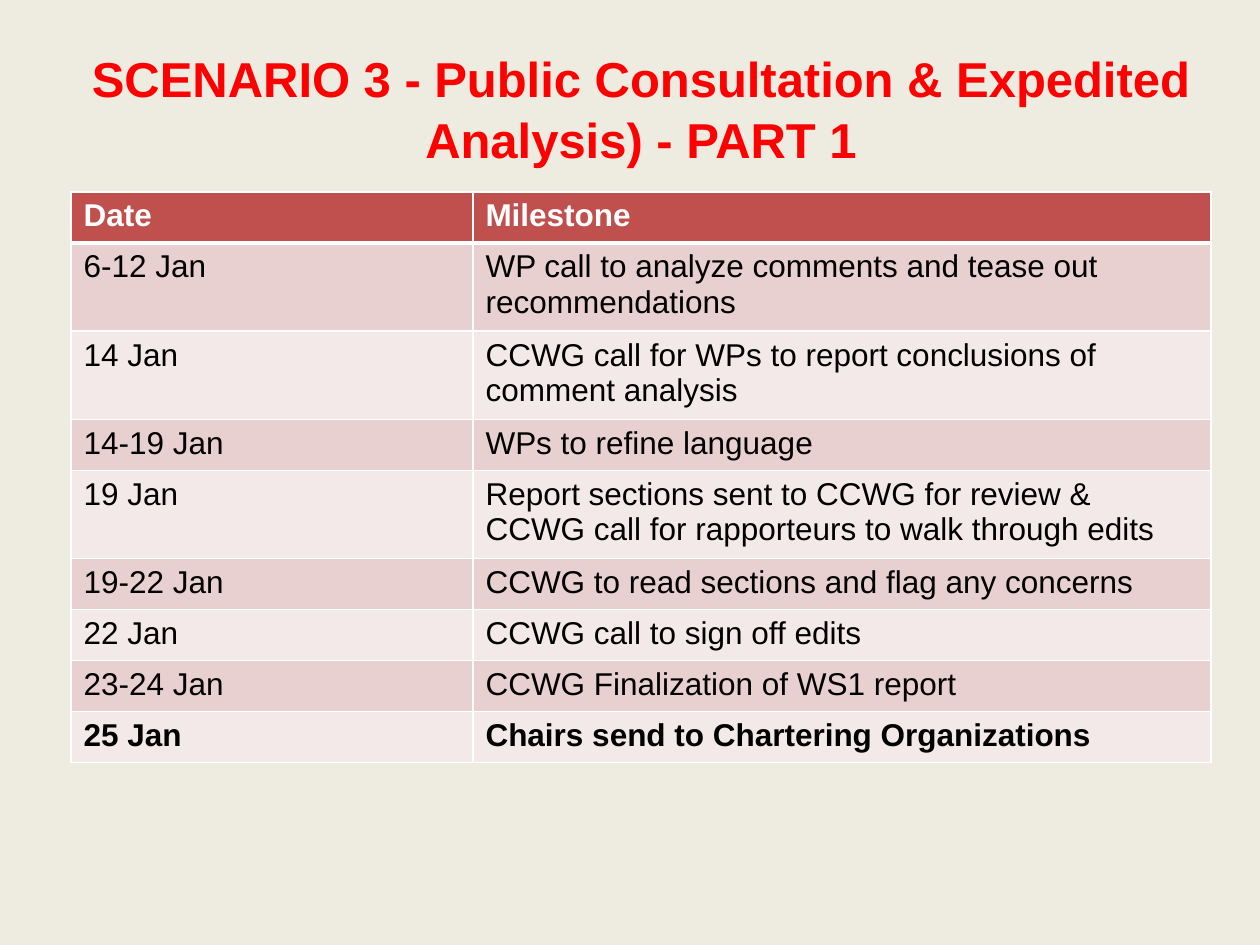
"""Build the Scenario 3 milestone slide: a red title above a two-column schedule."""
from lxml.etree import SubElement
from pptx import Presentation
from pptx.dml.color import RGBColor
from pptx.enum.text import PP_ALIGN
from pptx.oxml.ns import qn
from pptx.util import Pt

PX = 914400 // 126
BACKGROUND = RGBColor(0xEE, 0xEC, 0xE1)
RED = RGBColor(0xFF, 0x00, 0x00)
HEADER = RGBColor(0xC0, 0x50, 0x4D)
BAND_DARK = RGBColor(0xE8, 0xD0, 0xD0)
BAND_LIGHT = RGBColor(0xF4, 0xE9, 0xE9)
WHITE = RGBColor(0xFF, 0xFF, 0xFF)
BLACK = RGBColor(0x00, 0x00, 0x00)

LEFT, WIDTH = 71, 1140
COLUMN_WIDTHS = (402, 738)
ROW_HEIGHT = 51
MILESTONES = [
    ("Date", "Milestone"),
    ("6-12 Jan", "WP call to analyze comments and tease out recommendations"),
    ("14 Jan", "CCWG call for WPs to report conclusions of comment analysis"),
    ("14-19 Jan", "WPs to refine language"),
    ("19 Jan", "Report sections sent to CCWG for review & "
               "CCWG call for rapporteurs to walk through edits"),
    ("19-22 Jan", "CCWG to read sections and flag any concerns"),
    ("22 Jan", "CCWG call to sign off edits"),
    ("23-24 Jan", "CCWG Finalization of WS1 report"),
    ("25 Jan", "Chairs send to Chartering Organizations"),
]


def write(frame, text, size=18, color=BLACK, bold=False, align=PP_ALIGN.LEFT):
    frame.word_wrap = True
    para = frame.paragraphs[0]
    para.alignment = align
    span = para.add_run()
    span.text = text
    span.font.name = "Arial"
    span.font.size = Pt(size)
    span.font.bold = bold
    span.font.color.rgb = color
    return para


def add_border(cell, side, points):
    line = SubElement(cell._tc.get_or_add_tcPr(), qn(f"a:ln{side}"), w=str(Pt(points)))
    fill = SubElement(line, qn("a:solidFill"))
    SubElement(fill, qn("a:srgbClr"), val=str(WHITE))


deck = Presentation()
deck.slide_width, deck.slide_height = 1260 * PX, 945 * PX
page = deck.slides.add_slide(deck.slide_layouts[6])
page.background.fill.solid()
page.background.fill.fore_color.rgb = BACKGROUND

title_box = page.shapes.add_textbox(LEFT * PX, 39 * PX, WIDTH * PX, 108 * PX)
title = write(title_box.text_frame,
              "SCENARIO 3 - Public Consultation & Expedited Analysis) - PART 1",
              size=28, color=RED, bold=True, align=PP_ALIGN.CENTER)
title.line_spacing = 1.05
title.space_before = Pt(2)

table = page.shapes.add_table(len(MILESTONES), len(COLUMN_WIDTHS), LEFT * PX, 192 * PX,
                              WIDTH * PX, len(MILESTONES) * ROW_HEIGHT * PX).table
for column, width in zip(table.columns, COLUMN_WIDTHS):
    column.width = width * PX

last = len(MILESTONES) - 1
for index, milestone in enumerate(MILESTONES):
    table.rows[index].height = ROW_HEIGHT * PX
    band = HEADER if index == 0 else BAND_DARK if index % 2 else BAND_LIGHT
    for cell, text in zip(table.rows[index].cells, milestone):
        write(cell.text_frame, text, color=BLACK if index else WHITE, bold=index in (0, last))
        for side in "LRTB":
            thick = (index, side) in ((0, "B"), (1, "T"))
            add_border(cell, side, 3 if thick else 1)
        cell.fill.solid()
        cell.fill.fore_color.rgb = band

deck.save("out.pptx")
